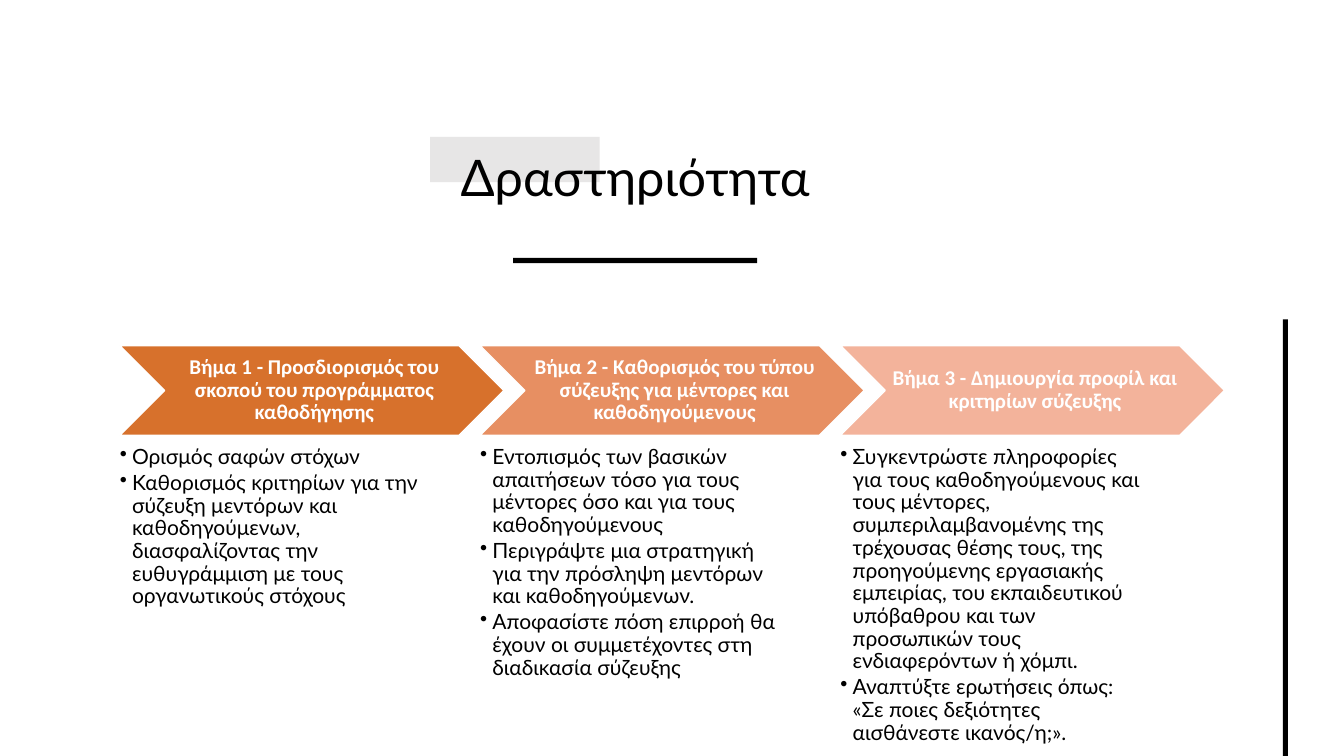
from lxml import etree
from pptx import Presentation
from pptx import util as u
from pptx.dml.color import RGBColor
from pptx.enum import shapes, text
from pptx.oxml.ns import qn

COLORS = {"black": "000000", "white": "FFFFFF", "accent": "E7E6E6"}

STEPS = [
    ("D7712C", "Βήμα 1 - Προσδιορισμός του σκοπού του προγράμματος καθοδήγησης", [
        "Ορισμός σαφών στόχων",
        "Καθορισμός κριτηρίων για την σύζευξη μεντόρων και καθοδηγούμενων, "
        "διασφαλίζοντας την ευθυγράμμιση με τους οργανωτικούς στόχους",
    ]),
    ("E78F62", "Βήμα 2 - Καθορισμός του τύπου σύζευξης για μέντορες και καθοδηγούμενους", [
        "Εντοπισμός των βασικών απαιτήσεων τόσο για τους μέντορες όσο και για "
        "τους καθοδηγούμενους",
        "Περιγράψτε μια στρατηγική για την πρόσληψη μεντόρων και καθοδηγούμενων.",
        "Αποφασίστε πόση επιρροή θα έχουν οι συμμετέχοντες στη διαδικασία σύζευξης",
    ]),
    ("F3B39B", "Βήμα 3 - Δημιουργία προφίλ και κριτηρίων σύζευξης", [
        "Συγκεντρώστε πληροφορίες για τους καθοδηγούμενους και τους μέντορες, "
        "συμπεριλαμβανομένης της τρέχουσας θέσης τους, της προηγούμενης "
        "εργασιακής εμπειρίας, του εκπαιδευτικού υπόβαθρου και των προσωπικών "
        "τους ενδιαφερόντων ή χόμπι.",
        "Αναπτύξτε ερωτήσεις όπως: «Σε ποιες δεξιότητες αισθάνεστε ικανός/η;».",
    ]),
]


def add_block(slide, preset, box, color):
    block = slide.shapes.add_shape(preset, *map(u.Cm, box))
    block.shadow.inherit = False
    block.fill.solid()
    block.fill.fore_color.rgb = RGBColor.from_string(color)
    block.line.fill.background()
    return block


def set_frame(frame, insets, anchor):
    frame.word_wrap = True
    frame.vertical_anchor = anchor
    (frame.margin_left, frame.margin_top,
     frame.margin_right, frame.margin_bottom) = map(u.Cm, insets)


def write(paragraph, words, size, font, color, bold=False):
    paragraph.line_spacing = 0.9
    run = paragraph.add_run()
    run.text = words
    run.font.size = u.Pt(size)
    run.font.name = font
    run.font.bold = bold
    run.font.color.rgb = RGBColor.from_string(color)


def add_bullet(paragraph):
    props = paragraph._p.get_or_add_pPr()
    props.set("marL", str(u.Cm(0.31)))
    props.set("indent", str(-u.Cm(0.31)))
    etree.SubElement(props, qn("a:buChar")).set("char", "•")


def add_heading(slide, left, top, width, height):
    rect = shapes.MSO_SHAPE.RECTANGLE
    add_block(slide, rect, (left + 6.17, top + 0.48, 4.27, 1.14), COLORS["accent"])
    title = slide.shapes.add_textbox(*map(u.Cm, (left, top, width, height))).text_frame
    set_frame(title, (0.25, 0.13, 0.25, 0.13), text.MSO_ANCHOR.BOTTOM)
    title.paragraphs[0].alignment = text.PP_ALIGN.CENTER
    write(title.paragraphs[0], "Δραστηριότητα", 36, "Lato", COLORS["black"])
    rule_width = 6.15
    rule_left = left + (width - rule_width) / 2
    add_block(slide, rect, (rule_left, top + 3.53, rule_width, 0.13), COLORS["black"])


def add_step(slide, left, top, width, height, step):
    color, heading, points = step
    arrow = add_block(slide, shapes.MSO_SHAPE.CHEVRON, (left, top, width, height), color)
    arrow.line.color.rgb = RGBColor.from_string(COLORS["white"])
    arrow.line.width = u.Pt(1)
    set_frame(arrow.text_frame, (0.18, 0.05, 0.05, 0.05), text.MSO_ANCHOR.MIDDLE)
    label = arrow.text_frame.paragraphs[0]
    label.alignment = text.PP_ALIGN.CENTER
    write(label, heading, 15, "Calibri", COLORS["white"], bold=True)

    details_box = (left, top + height + 0.28, width * 0.8, 6.2)
    details = slide.shapes.add_textbox(*map(u.Cm, details_box)).text_frame
    set_frame(details, (0, 0, 0, 0), text.MSO_ANCHOR.TOP)
    for index, point in enumerate(points):
        paragraph = details.add_paragraph() if index else details.paragraphs[0]
        add_bullet(paragraph)
        paragraph.space_after = u.Pt(2.25)
        write(paragraph, point, 15, "Lato", COLORS["black"])


def add_steps(slide, left, top, width, height):
    arrow_width = 9.68
    pitch = (width - arrow_width) / (len(STEPS) - 1)
    for index, step in enumerate(STEPS):
        add_step(slide, left + index * pitch, top, arrow_width, height, step)


def main():
    deck = Presentation()
    deck.slide_width, deck.slide_height = u.Cm(33.87), u.Cm(19.05)
    slide = deck.slides.add_slide(deck.slide_layouts[6])
    add_heading(slide, 4.67, 2.97, 22.68, 2.39)
    add_block(slide, shapes.MSO_SHAPE.RECTANGLE, (32.33, 8.05, 0.13, 11), COLORS["black"])
    add_steps(slide, 3.02, 8.71, 27.84, 2.26)
    deck.save("out.pptx")


if __name__ == "__main__":
    main()
